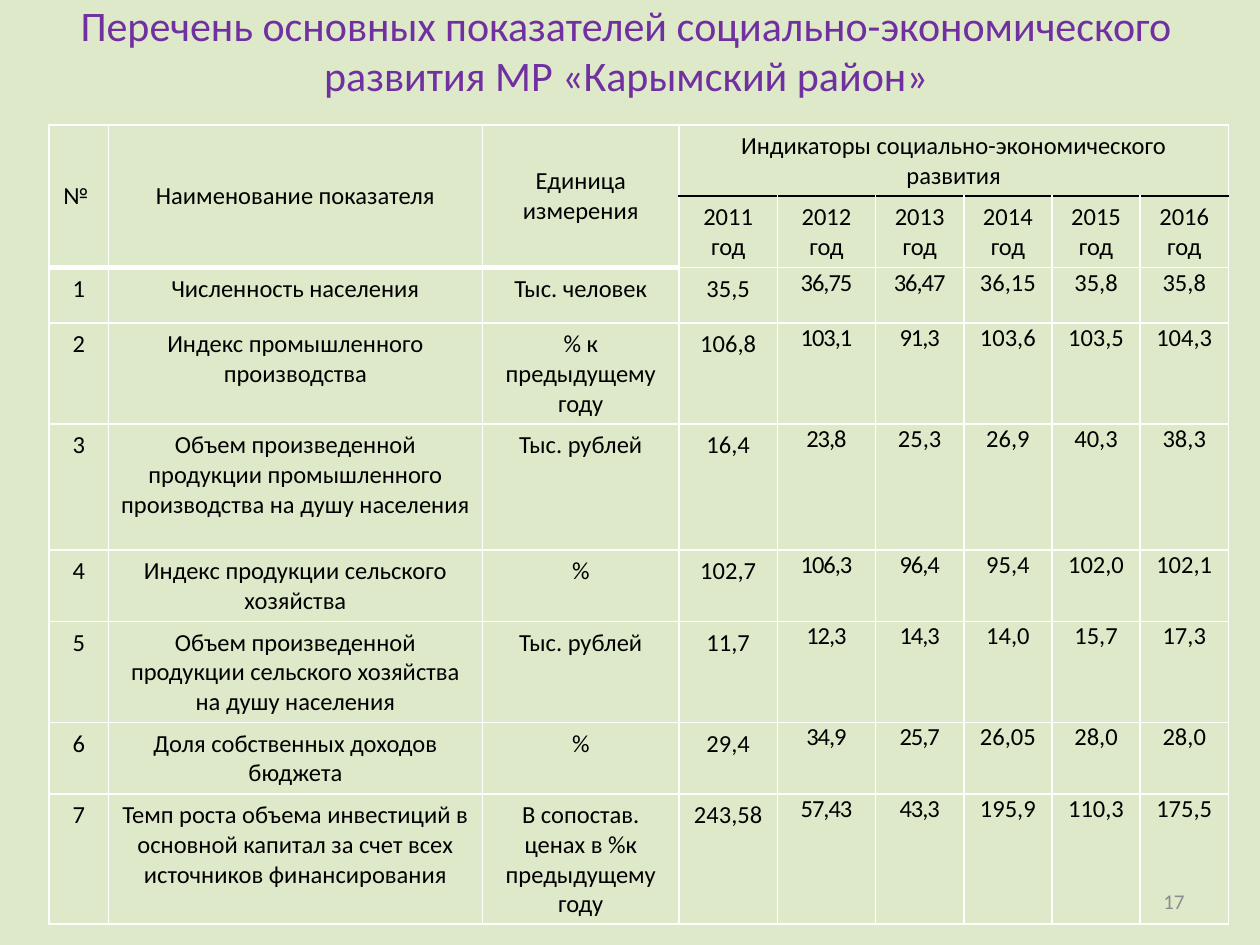
from dataclasses import dataclass

from lxml import etree
from pptx import Presentation
from pptx.dml.color import RGBColor
from pptx.enum.text import MSO_ANCHOR, PP_ALIGN
from pptx.oxml.ns import qn
from pptx.util import Inches, Pt

CENTER, RIGHT = PP_ALIGN.CENTER, PP_ALIGN.RIGHT
TOP, MIDDLE = MSO_ANCHOR.TOP, MSO_ANCHOR.MIDDLE

COLORS = {
    "background": "DEE9C9",
    "title": "7030A0",
    "text": "000000",
    "grid": "FFFFFF",
    "header_rule": "000000",
    "page_number": "8C8C8C",
}
COL_WIDTHS = [0.47, 2.97, 1.56, 0.78, 0.78] + [0.7] * 4
ROW_HEIGHTS = [0.55, 0.55, 0.44, 0.77, 1, 0.55, 0.77, 0.55, 1]
HEADERS = ["№ ", "Наименование показателя", "Единица измерения"]
GROUP_HEADER = "Индикаторы социально-экономического развития"
YEARS = range(2011, 2017)
FIRST_YEAR_COL = len(HEADERS)
LAST_COL = len(COL_WIDTHS) - 1
TIGHT_MARGINS = {
    "margin_left": Inches(0.07),
    "margin_right": Inches(0.07),
    "margin_top": 0,
    "margin_bottom": 0,
}


@dataclass
class Indicator:
    name: str
    unit: str
    values: str
    tight_years: int = 2  # last column offset whose digits are condensed


INDICATORS = [
    Indicator("Численность населения", "Тыс. человек",
              "35,5 36,75 36,47 36,15 35,8 35,8"),
    Indicator("Индекс промышленного производства", "% к предыдущему году",
              "106,8 103,1 91,3 103,6 103,5 104,3"),
    Indicator("Объем произведенной продукции промышленного производства на душу населения",
              "Тыс. рублей", "16,4 23,8 25,3 26,9 40,3 38,3", tight_years=1),
    Indicator("Индекс продукции сельского хозяйства", "%",
              "102,7 106,3 96,4 95,4 102,0 102,1"),
    Indicator("Объем произведенной продукции сельского хозяйства на душу населения",
              "Тыс. рублей", "11,7 12,3 14,3 14,0 15,7 17,3"),
    Indicator("Доля собственных доходов бюджета", "%",
              "29,4 34,9 25,7 26,05 28,0 28,0"),
    Indicator("Темп роста объема инвестиций в основной капитал за счет всех "
              "источников финансирования", "В сопостав. ценах в %к предыдущему году",
              "243,58 57,43 43,3 195,9 110,3 175,5"),
]


def set_attrs(target, values: dict) -> None:
    for name, value in values.items():
        setattr(target, name, value)


def write(tf, text: str, size: float, color: str, align=CENTER, spacing: int = 0) -> None:
    """Fill a text frame with one run; spacing is in hundredths of a point."""
    p = tf.paragraphs[0]
    p.alignment = align
    r = p.add_run()
    r.text = text
    set_attrs(r.font, {"name": "Calibri", "size": Pt(size), "bold": False})
    r.font.color.rgb = RGBColor.from_string(COLORS[color])
    if spacing:
        r._r.get_or_add_rPr().set("spc", str(spacing))


def add_text(s, box: tuple, text: str, size: float, color: str, align=CENTER) -> None:
    tf = s.shapes.add_textbox(*map(Inches, box)).text_frame
    set_attrs(tf, {"word_wrap": True, "vertical_anchor": MIDDLE})
    write(tf, text, size, color, align)


def style_cell(cell, row: int, col: int) -> None:
    """Draw the cell's grid lines, with a dark rule under the group header."""
    tc_pr = cell._tc.get_or_add_tcPr()
    under_group = col >= FIRST_YEAR_COL
    ruled = {"B": under_group and row == 0, "T": under_group and row == 1}
    for side in "LRTB":
        heavy = side == "B" and row == 0 and not under_group
        ln = etree.SubElement(tc_pr, qn(f"a:ln{side}"), w=str(Pt(3 if heavy else 1)))
        fill = etree.SubElement(ln, qn("a:solidFill"))
        color = COLORS["header_rule" if ruled.get(side) else "grid"]
        etree.SubElement(fill, qn("a:srgbClr"), val=color)
    cell.fill.background()


def fill_cell(cell, text: str, anchor=TOP, spacing: int = 0) -> None:
    cell.vertical_anchor = anchor
    write(cell.text_frame, text, 14, "text", spacing=spacing)


def fill_headers(table) -> None:
    for col, text in enumerate(HEADERS):
        table.cell(0, col).merge(table.cell(1, col))
        fill_cell(table.cell(0, col), text, MIDDLE)
    table.cell(0, FIRST_YEAR_COL).merge(table.cell(0, LAST_COL))
    fill_cell(table.cell(0, FIRST_YEAR_COL), GROUP_HEADER, MIDDLE)
    for col, year in enumerate(YEARS, FIRST_YEAR_COL):
        fill_cell(table.cell(1, col), f"{year} год")


def fill_indicators(table) -> None:
    for number, item in enumerate(INDICATORS, 1):
        row = number + 1
        for col, text in enumerate([str(number), item.name, item.unit]):
            fill_cell(table.cell(row, col), text)
        for i, value in enumerate(item.values.split()):
            cell = table.cell(row, FIRST_YEAR_COL + i)
            if i > 0:
                set_attrs(cell, TIGHT_MARGINS)
            fill_cell(cell, value, spacing=-60 if 0 < i <= item.tight_years else 0)


def add_indicator_table(s) -> None:
    frame = s.shapes.add_table(len(ROW_HEIGHTS), len(COL_WIDTHS), Inches(0.39),
                               Inches(0.99), Inches(9.38), Inches(6.34))
    table = frame.table
    set_attrs(table, {"first_row": False, "horz_banding": False})
    for column, width in zip(table.columns, COL_WIDTHS):
        column.width = Inches(width)
    for row, height in zip(table.rows, ROW_HEIGHTS):
        row.height = Inches(height)
    for row in range(len(ROW_HEIGHTS)):
        for col in range(len(COL_WIDTHS)):
            style_cell(table.cell(row, col), row, col)
    fill_headers(table)
    fill_indicators(table)


def main() -> None:
    prs = Presentation()
    set_attrs(prs, {"slide_width": Inches(10), "slide_height": Inches(7.5)})
    s = prs.slides.add_slide(prs.slide_layouts[6])
    s.background.fill.solid()
    s.background.fill.fore_color.rgb = RGBColor.from_string(COLORS["background"])
    add_text(s, (0.47, -0.23, 9, 1.25),
             "Перечень основных показателей социально-экономического развития "
             "МР «Карымский район»", 24, "title")
    add_indicator_table(s)
    add_text(s, (7.17, 6.95, 2.33, 0.4), "17", 12, "page_number", RIGHT)
    prs.save("out.pptx")


if __name__ == "__main__":
    main()
